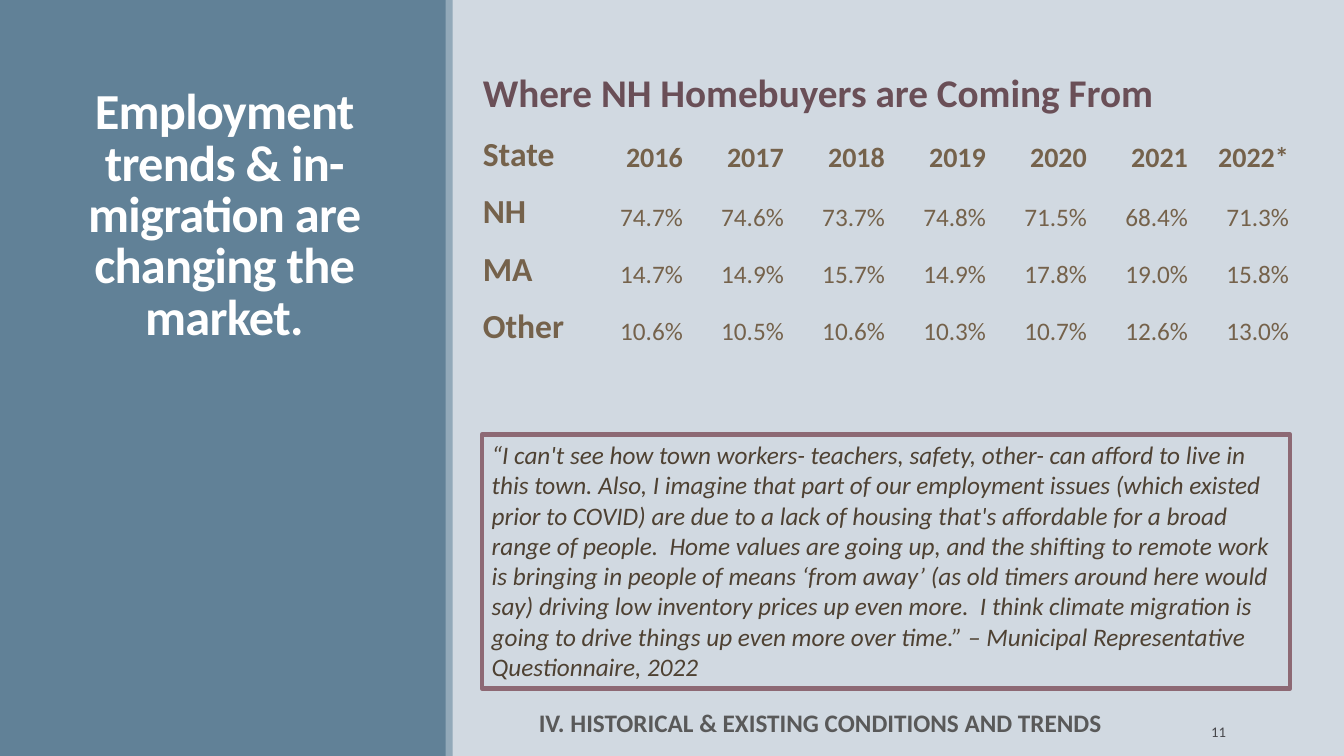
from pptx import Presentation
from pptx.dml.color import RGBColor as RGB
from pptx.enum.shapes import MSO_SHAPE as Shape
from pptx.enum.text import MSO_ANCHOR as Anchor, PP_ALIGN as Align
from pptx.oxml.ns import qn
from pptx.util import Inches, Pt

BACK = RGB(0xD1, 0xD9, 0xE1)
BLUE = RGB(0x61, 0x81, 0x97)
PALE = RGB(0x92, 0xA9, 0xB9)
WHITE = RGB(0xFF, 0xFF, 0xFF)
SLATE = RGB(0x46, 0x46, 0x4A)
GRAY = RGB(0x59, 0x59, 0x59)
ROSE = RGB(0x8D, 0x69, 0x74)
PLUM = RGB(0x6A, 0x4F, 0x57)
TAN = RGB(0x75, 0x62, 0x4B)
BROWN = RGB(0x4E, 0x41, 0x32)
PLAIN = "{2D5ABB26-0587-4C30-8999-92F81FD0307C}"

TITLE = "Employment trends & in-migration are changing the market."
QUOTE = (
    "“I can't see how town workers- teachers, safety, other- can afford to live in this town. "
    "Also, I imagine that part of our employment issues (which existed prior to COVID) are due "
    "to a lack of housing that's affordable for a broad range of people.  Home values are going "
    "up, and the shifting to remote work is bringing in people of means ‘from away’ (as old "
    "timers around here would say) driving low inventory prices up even more.  I think climate "
    "migration is going to drive things up even more over time.” – Municipal Representative "
    "Questionnaire, 2022"
)
HEAD = "Where NH Homebuyers are Coming From"
ROWS = [
    ["State", "2016", "2017", "2018", "2019", "2020", "2021", "2022*"],
    ["NH", "74.7%", "74.6%", "73.7%", "74.8%", "71.5%", "68.4%", "71.3%"],
    ["MA", "14.7%", "14.9%", "15.7%", "14.9%", "17.8%", "19.0%", "15.8%"],
    ["Other", "10.6%", "10.5%", "10.6%", "10.3%", "10.7%", "12.6%", "13.0%"],
]


class Deck:
    """Draws styled elements on one slide, with lengths in percent of its size."""

    def __init__(self):
        self.file = Presentation()
        self.file.slide_width = Inches(13.33)
        self.file.slide_height = Inches(7.5)
        self.face = "Calibri"
        self.slide = self.file.slides.add_slide(self.file.slide_layouts[6])
        fill = self.slide.background.fill
        fill.solid()
        fill.fore_color.rgb = BACK

    def wide(self, part):
        return int(self.file.slide_width * part / 100)

    def high(self, part):
        return int(self.file.slide_height * part / 100)

    def area(self, x, y, w, h):
        return self.wide(x), self.high(y), self.wide(w), self.high(h)

    def put(self, frame, text, size, color, bold=False, italic=False, align=Align.LEFT):
        frame.word_wrap = True
        para = frame.paragraphs[0]
        para.add_run().text = text
        para.alignment = align
        font = para.font
        font.name, font.size, font.bold, font.italic = self.face, Pt(size), bold, italic
        font.color.rgb = color
        return para

    def text(self, box, text, size, color, anchor=Anchor.TOP, **style):
        frame = self.slide.shapes.add_textbox(*self.area(*box)).text_frame
        frame.vertical_anchor = anchor
        return self.put(frame, text, size, color, **style)

    def rect(self, box, fill=None, line=None):
        shape = self.slide.shapes.add_shape(Shape.RECTANGLE, *self.area(*box))
        shape.shadow.inherit = False
        if fill:
            shape.fill.solid()
            shape.fill.fore_color.rgb = fill
        else:
            shape.fill.background()
        if line:
            shape.line.color.rgb = line
            shape.line.width = Pt(3)
        else:
            shape.line.fill.background()
        return shape

    def cell(self, cell, text, size, color, **style):
        cell.fill.background()
        cell.vertical_anchor = Anchor.BOTTOM
        cell.margin_left = cell.margin_right = cell.margin_top = Inches(0.01)
        cell.margin_bottom = 0
        self.put(cell.text_frame, text, size, color, **style)

    def table(self, box, head, rows, top):
        count = len(rows[0])
        grid = self.slide.shapes.add_table(len(rows) + 1, count, *self.area(*box)).table
        grid.first_row = grid.horz_banding = False
        grid._tbl.tblPr.find(qn("a:tableStyleId")).text = PLAIN
        for col in grid.columns:
            col.width = self.wide(box[2] / count)
        for row in grid.rows:
            row.height = self.high((box[3] - top) / len(rows))
        grid.rows[0].height = self.high(top)
        grid.cell(0, 0).merge(grid.cell(0, count - 1))
        self.cell(grid.cell(0, 0), head, 28, PLUM, bold=True)
        for r, row in enumerate(rows):
            for c, text in enumerate(row):
                size = 24 if c == 0 else 20 if r == 0 else 18
                align = Align.RIGHT if c else Align.LEFT
                self.cell(grid.cell(r + 1, c), text, size, TAN, bold=r * c == 0, align=align)


def main():
    deck = Deck()
    deck.rect((0, 0, 33.23, 100), BLUE)
    title = deck.text((4.05, 11.07, 25.28, 36), TITLE, 36, WHITE, bold=True, align=Align.CENTER)
    title.line_spacing = 0.85
    title._p.get_or_add_pPr().get_or_add_defRPr().set("spc", "-50")
    deck.rect((33.15, 0, 0.53, 100), PALE)
    deck.text((83.03, 94.13, 8.93, 5.33), "11", 10.5, SLATE, Anchor.MIDDLE, align=Align.RIGHT)
    deck.text((39.35, 92.93, 50, 5.33), "IV. HISTORICAL & EXISTING CONDITIONS AND TRENDS",
              18, GRAY, bold=True)
    quote = deck.rect((35.85, 57.47, 60.15, 33.6), line=ROSE).text_frame
    quote.vertical_anchor = Anchor.TOP
    deck.put(quote, QUOTE, 18, BROWN, italic=True)
    deck.table((35.85, 7.2, 60.15, 38.8), HEAD, ROWS, 8.4)
    deck.file.save("out.pptx")


if __name__ == "__main__":
    main()
